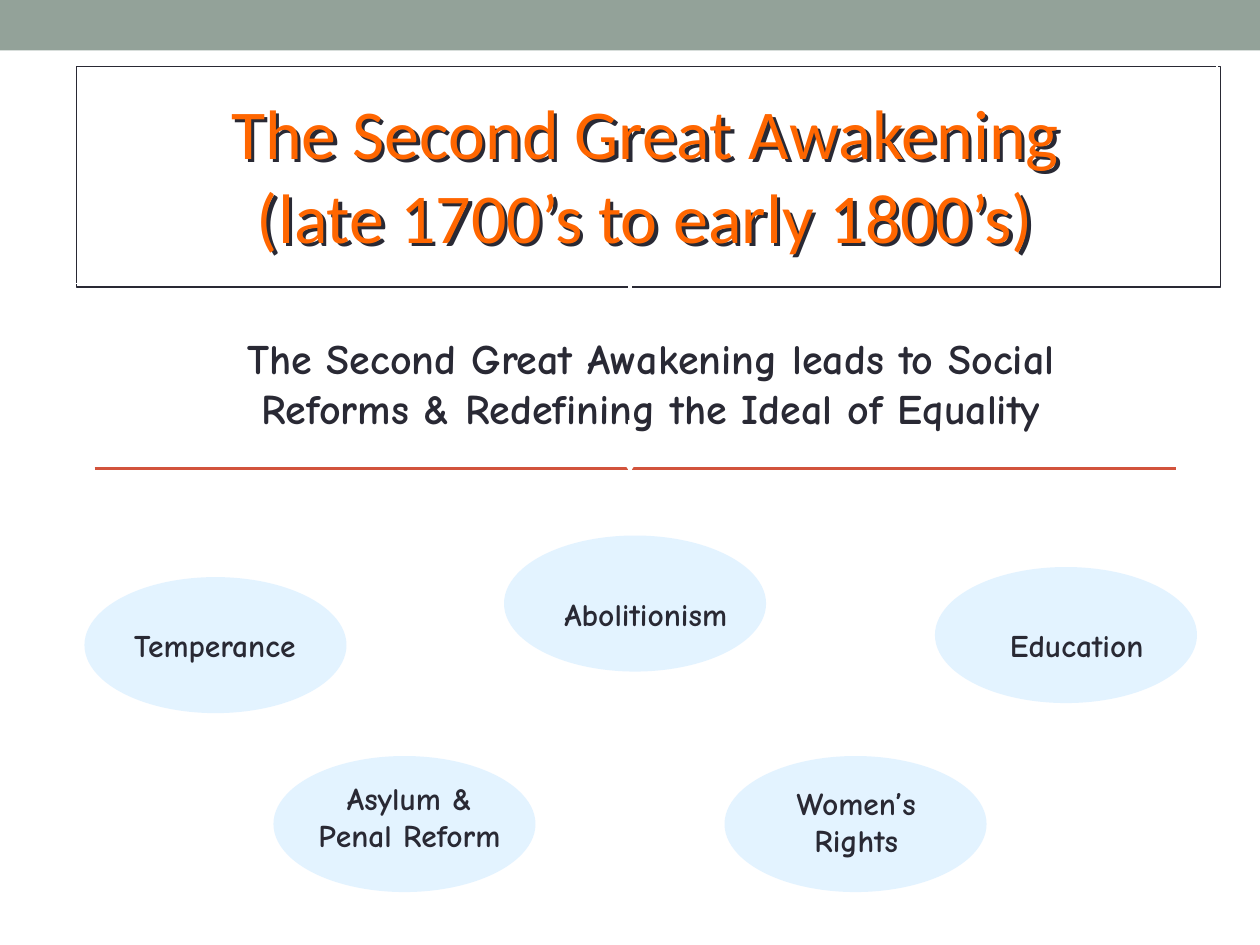
from lxml import etree
from pptx import Presentation
from pptx.dml.color import RGBColor
from pptx.enum.shapes import MSO_CONNECTOR, MSO_SHAPE
from pptx.enum.text import MSO_ANCHOR, MSO_AUTO_SIZE, PP_ALIGN
from pptx.oxml.ns import qn
from pptx.util import Inches, Pt

STRAIGHT = MSO_CONNECTOR.STRAIGHT
RECTANGLE, OVAL = MSO_SHAPE.RECTANGLE, MSO_SHAPE.OVAL
CENTER, MIDDLE = PP_ALIGN.CENTER, MSO_ANCHOR.MIDDLE
NO_AUTOFIT, GROW = MSO_AUTO_SIZE.NONE, MSO_AUTO_SIZE.SHAPE_TO_FIT_TEXT
TITLE_ONLY = 5

COLORS = {
    "band": "93A299",
    "rule": "D2533C",
    "title": "FF6600",
    "ink": "292934",
    "white": "FFFFFF",
    "bubble": "C9E8FF",
}
TITLE_FONT = {"name": "Calibri", "size": Pt(40), "bold": False}
SUBTITLE_FONT = {"name": "Comic Neue", "size": Pt(24), "bold": True}
LABEL_FONT = {"name": "Comic Neue", "size": Pt(18), "bold": True}

BUBBLE_SIZE = (2.08, 1.08)
ARROWS = [
    (5, 2, 5, 2.5),
    (5, 3.33, 5, 3.75),
    (2.83, 4.58, 1.83, 4.92),
    (3.75, 4.67, 3.25, 5.92),
    (5, 4.67, 5, 5),
    (6.5, 4.67, 6.75, 5.92),
]
REFORMS = [
    ("Temperance", (0.67, 4.58), (0.83, 4.92, 1.75, 0.4)),
    ("Asylum &\vPenal Reform", (2.17, 6), (2.25, 6.13, 2, 0.7)),
    ("Education", (7.42, 4.5), (7.67, 4.92, 1.75, 0.4)),
    ("Women’s Rights", (5.75, 6), (5.92, 6.17, 1.75, 0.7)),
    ("Abolitionism", (4, 4.25), (4.25, 4.67, 1.75, 0.4)),
]


def rgb(color):
    """Return the named colour."""
    return RGBColor.from_string(COLORS[color])


def write(frame, text, font, color):
    """Fill a text frame with centred, formatted text."""
    frame.text = text
    for paragraph in frame.paragraphs:
        paragraph.alignment = CENTER
        for run in paragraph.runs:
            for key, value in font.items():
                setattr(run.font, key, value)
            run.font.color.rgb = rgb(color)


def add_filled(slide, kind, box, color, opacity=100):
    """Add an unlined shape with a plain or translucent fill."""
    shape = slide.shapes.add_shape(kind, *map(Inches, box))
    shape.shadow.inherit = False
    shape.fill.solid()
    shape.fill.fore_color.rgb = rgb(color)
    shape.line.fill.background()
    if opacity < 100:
        fill_color = shape.fill._xPr.find(f"{qn('a:solidFill')}/{qn('a:srgbClr')}")
        etree.SubElement(fill_color, qn("a:alpha"), val=str(opacity * 1000))


def add_line(slide, ends, color, width, arrow=False):
    """Add a straight line, with an arrowhead at its end if asked."""
    line = slide.shapes.add_connector(STRAIGHT, *map(Inches, ends))
    line.line.color.rgb = rgb(color)
    line.line.width = Pt(width)
    if arrow:
        etree.SubElement(line.line._get_or_add_ln(), qn("a:tailEnd"), type="arrow")
    etree.SubElement(line._element.spPr, qn("a:effectLst"))


def add_text(slide, text, box, font):
    """Add a wrapping text box in the ink colour."""
    frame = slide.shapes.add_textbox(*map(Inches, box)).text_frame
    frame.word_wrap = True
    frame.auto_size = GROW
    write(frame, text, font, "ink")


def add_shadow(shape, color, distance, angle):
    """Give a shape a sharp outer shadow."""
    effects = etree.SubElement(shape._element.spPr, qn("a:effectLst"))
    shadow = etree.SubElement(
        effects, qn("a:outerShdw"), dist=str(Pt(distance)),
        dir=str(angle * 60000), algn="ctr", rotWithShape="0",
    )
    etree.SubElement(shadow, qn("a:srgbClr"), val=COLORS[color])


def set_title(slide, text, box):
    """Place the title in its shadowed frame."""
    title = slide.shapes.title
    title.left, title.top, title.width, title.height = map(Inches, box)
    title.fill.background()
    title.line.color.rgb = rgb("white")
    title.line.width = Pt(0.75)
    add_shadow(title, "ink", 2.8, 45)
    frame = title.text_frame
    frame.auto_size = NO_AUTOFIT
    frame.word_wrap = False
    frame.vertical_anchor = MIDDLE
    write(frame, text, TITLE_FONT, "title")


def main():
    """Build the slide and save it."""
    deck = Presentation()
    deck.slide_width, deck.slide_height = Inches(10), Inches(7.5)
    slide = deck.slides.add_slide(deck.slide_layouts[TITLE_ONLY])
    add_filled(slide, RECTANGLE, (0, 0, 10, 0.4), "band")
    add_line(slide, (0.75, 3.72, 9.33, 3.72), "rule", 1.5)
    set_title(
        slide,
        "The Second Great Awakening\n(late 1700’s to early 1800’s)",
        (0.58, 0.5, 9.08, 1.75),
    )
    add_text(
        slide,
        "The Second Great Awakening leads to Social Reforms"
        " & Redefining the Ideal of Equality",
        (1.25, 2.59, 7.83, 0.91),
        SUBTITLE_FONT,
    )
    for ends in ARROWS:
        add_line(slide, ends, "white", 2.25, arrow=True)
    for name, corner, label_box in REFORMS:
        add_filled(slide, OVAL, corner + BUBBLE_SIZE, "bubble", opacity=50)
        add_text(slide, name, label_box, LABEL_FONT)
    deck.save("out.pptx")


if __name__ == "__main__":
    main()
